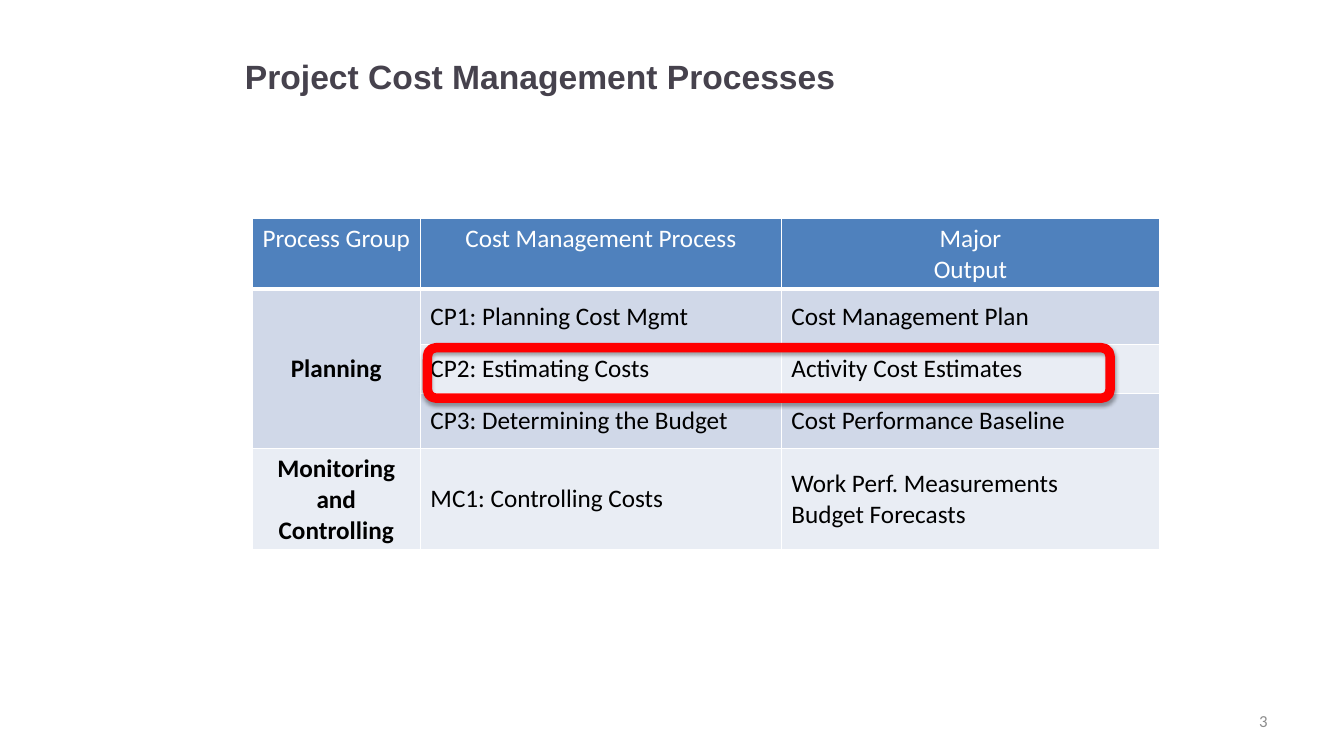
from dataclasses import dataclass

from lxml import etree
from pptx import Presentation
from pptx import util as u
from pptx.dml.color import RGBColor
from pptx.enum import shapes, text
from pptx.oxml.ns import qn


@dataclass(frozen=True)
class Theme:
    title_font: str = "Arial"
    body_font: str = "Calibri"
    title_size: float = 24
    body_size: float = 18
    number_size: float = 12
    title: str = "46424D"
    ink: str = "000000"
    paper: str = "FFFFFF"
    number: str = "8C8C8C"
    header: str = "4F81BD"
    dark_band: str = "D0D8E8"
    light_band: str = "E9EDF4"
    highlight: str = "FF0000"
    rule: float = 1
    header_rule: float = 3
    frame_line: float = 6.75


THEME = Theme()
COLUMNS = (1.67, 3.58, 3.75)
ROWS = (0.7, 0.55, 0.48, 0.55, 1)
BANDS = (THEME.header, THEME.dark_band, THEME.light_band, THEME.dark_band, THEME.light_band)
PROCESSES = (
    (["Process Group"], ["Cost Management Process"], ["Major", "Output"]),
    (["Planning"], ["CP1: Planning Cost Mgmt"], ["Cost Management Plan"]),
    (None, ["CP2: Estimating Costs"], ["Activity Cost Estimates"]),
    (None, ["CP3: Determining the Budget"], ["Cost Performance Baseline"]),
    (["Monitoring and Controlling"], ["MC1: Controlling Costs"],
     ["Work Perf. Measurements", "Budget Forecasts"]),
)


def inches(box):
    return [u.Inches(length) for length in box]


def write(frame, lines, font, size, color, bold=False, align=text.PP_ALIGN.LEFT):
    for index, line in enumerate(lines):
        para = frame.paragraphs[0] if index == 0 else frame.add_paragraph()
        para.alignment = align
        span = para.add_run()
        span.text = line
        span.font.name = font
        span.font.size = u.Pt(size)
        span.font.bold = bold
        span.font.color.rgb = RGBColor.from_string(color)


def set_borders(cell, bottom):
    properties = cell._tc.get_or_add_tcPr()
    widths = {"a:lnL": THEME.rule, "a:lnR": THEME.rule, "a:lnT": THEME.rule, "a:lnB": bottom}
    for position, (side, width) in enumerate(widths.items()):
        line = etree.Element(qn(side), w=str(u.Pt(width)))
        fill = etree.SubElement(line, qn("a:solidFill"))
        etree.SubElement(fill, qn("a:srgbClr"), val=THEME.paper)
        properties.insert(position, line)


def add_title(page, box, words):
    title = page.shapes.title
    title.left, title.top, title.width, title.height = inches(box)
    title.text_frame.vertical_anchor = text.MSO_ANCHOR.MIDDLE
    write(title.text_frame, [words], THEME.title_font, THEME.title_size, THEME.title, bold=True)


def add_process_table(page, box):
    table = page.shapes.add_table(len(ROWS), len(COLUMNS), *inches(box)).table
    table.first_row = table.horz_banding = False
    for column, width in zip(table.columns, COLUMNS):
        column.width = u.Inches(width)
    for row, height in zip(table.rows, ROWS):
        row.height = u.Inches(height)
    for r, record in enumerate(PROCESSES):
        for c, lines in enumerate(record):
            cell = table.cell(r, c)
            is_header, is_group = r == 0, c == 0
            cell.fill.solid()
            cell.fill.fore_color.rgb = RGBColor.from_string(BANDS[r])
            set_borders(cell, THEME.header_rule if is_header else THEME.rule)
            cell.vertical_anchor = text.MSO_ANCHOR.TOP if is_header else text.MSO_ANCHOR.MIDDLE
            if lines:
                centred = is_header or is_group
                write(cell.text_frame, lines, THEME.body_font, THEME.body_size,
                      THEME.paper if is_header else THEME.ink,
                      bold=is_group and not is_header,
                      align=text.PP_ALIGN.CENTER if centred else text.PP_ALIGN.LEFT)
    table.cell(1, 0).merge(table.cell(3, 0))


def add_highlight(page, box):
    """Frame one table row in a rounded outline with a soft shadow."""
    frame = page.shapes.add_shape(shapes.MSO_SHAPE.ROUNDED_RECTANGLE, *inches(box))
    frame.fill.background()
    frame.line.color.rgb = RGBColor.from_string(THEME.highlight)
    frame.line.width = u.Pt(THEME.frame_line)
    frame.shadow.inherit = False
    effects = frame._element.spPr.find(qn("a:effectLst"))
    shadow = etree.SubElement(effects, qn("a:outerShdw"), blurRad=str(u.Pt(3.1)),
                              dist=str(u.Pt(1.8)), dir="5400000", rotWithShape="0")
    tint = etree.SubElement(shadow, qn("a:srgbClr"), val=THEME.ink)
    etree.SubElement(tint, qn("a:alpha"), val="35000")


def add_page_number(page, box, number):
    frame = page.shapes.add_textbox(*inches(box)).text_frame
    frame.word_wrap = True
    frame.vertical_anchor = text.MSO_ANCHOR.MIDDLE
    write(frame, [number], THEME.body_font, THEME.number_size, THEME.number,
          align=text.PP_ALIGN.RIGHT)


def main():
    deck = Presentation()
    deck.slide_width, deck.slide_height = inches((13.33, 7.5))
    page = deck.slides.add_slide(deck.slide_layouts.get_by_name("Title Only"))
    left, top = 2.5, 2.17
    add_title(page, (2.33, 0.17, 9.75, 1.17), "Project Cost Management Processes")
    add_page_number(page, (9.56, 6.95, 3.11, 0.4), "3")
    add_process_table(page, (left, top, sum(COLUMNS), sum(ROWS)))
    add_highlight(page, (left + COLUMNS[0] + 0.07, top + sum(ROWS[:2]) + 0.03, 6.77, 0.5))
    deck.save("out.pptx")


if __name__ == "__main__":
    main()
